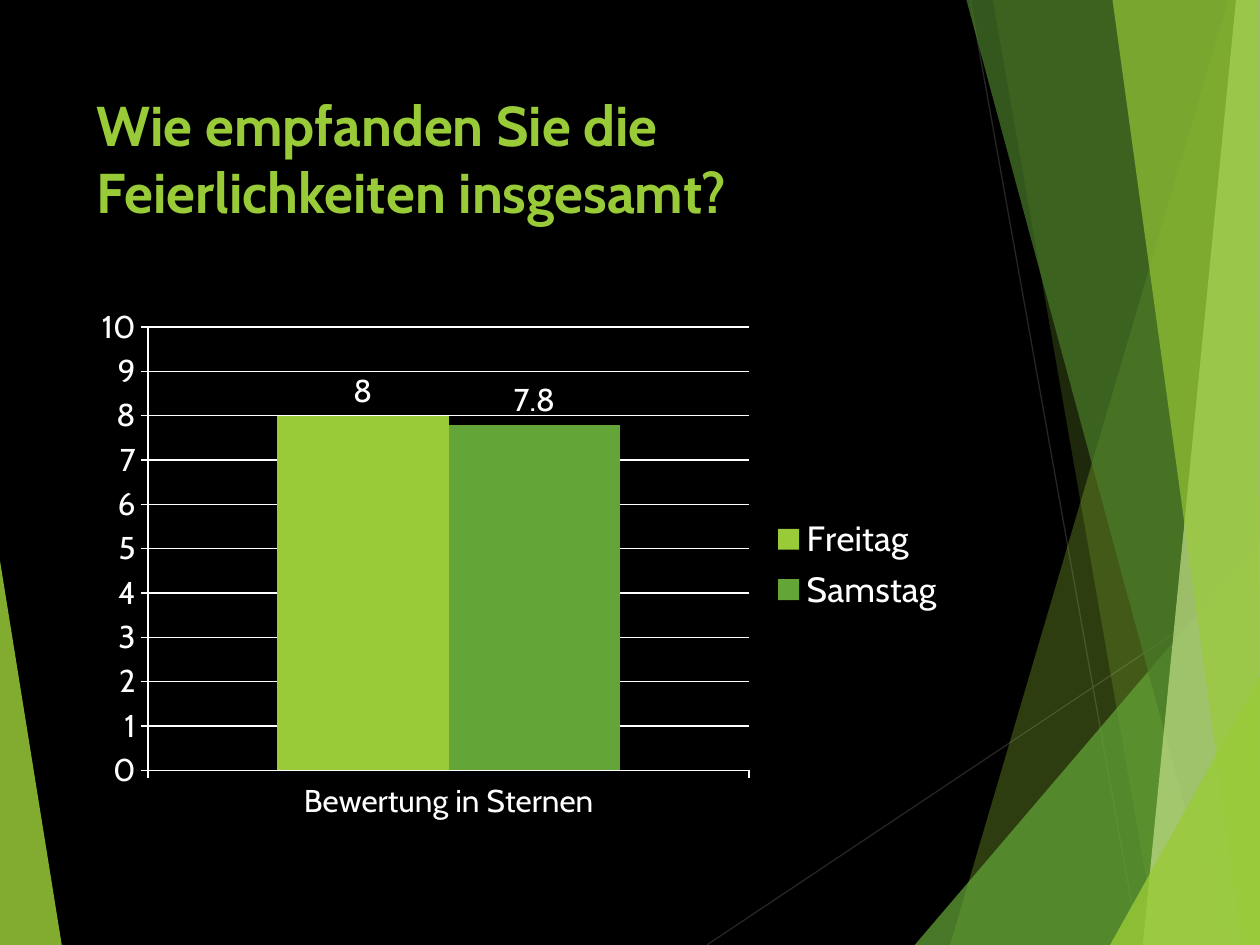
from dataclasses import dataclass

from lxml.etree import SubElement
from pptx import Presentation
from pptx.chart.data import CategoryChartData
from pptx.dml.color import RGBColor
from pptx.enum.chart import XL_CHART_TYPE, XL_LABEL_POSITION, XL_LEGEND_POSITION, XL_TICK_MARK
from pptx.enum.shapes import MSO_CONNECTOR
from pptx.enum.text import MSO_ANCHOR
from pptx.oxml.ns import qn
from pptx.util import Inches, Pt


@dataclass(frozen=True)
class Theme:
    """Colours, font and type sizes of the slide."""
    background: str = "000000"
    text: str = "FFFFFF"
    lime: str = "99CB38"
    green: str = "63A537"
    forest: str = "4A7C29"
    pale: str = "C2E088"
    hairline: str = "262626"
    font: str = "Cabin"
    title_size: int = 32
    legend_size: int = 20
    chart_size: int = 18
    line_width: float = 0.75


THEME = Theme()
WIDTH, HEIGHT = 10, 7.5

RAYS = [((5.61, 7.5), (10, 4.57)), ((7.7, 0), (9.04, 7.5))]

FACETS = [
    ([(0, 4.45), (0.49, 7.5), (0, 7.5)], THEME.lime, 85),
    ([(9.75, 0), (7.54, 7.5), (10, 7.5), (10, 0)], THEME.lime, 30),
    ([(7.88, 0), (9.19, 7.5), (10, 7.5), (10, 0)], THEME.lime, 20),
    ([(7.26, 7.5), (10, 4.29), (10, 7.5)], THEME.green, 72),
    ([(7.67, 0), (9.7, 7.5), (10, 7.5), (10, 0)], THEME.forest, 70),
    ([(9.81, 0), (9.07, 7.5), (10, 7.5), (10, 0)], THEME.pale, 70),
    ([(8.83, 0), (9.86, 7.5), (10, 7.5), (9.98, 0)], THEME.lime, 65),
    ([(8.81, 7.5), (10, 5.37), (10, 7.5)], THEME.lime, 80),
]


def set_attributes(target, values):
    """Set every attribute named in a dict of format values."""
    for name, value in values.items():
        setattr(target, name, value)


def paint(fill, color):
    """Give a fill one solid colour."""
    fill.solid()
    fill.fore_color.rgb = RGBColor.from_string(color)


def format_font(font, size, color, bold=False):
    """Apply the theme font with a size and a colour."""
    set_attributes(font, {"name": THEME.font, "size": Pt(size), "bold": bold})
    font.color.rgb = RGBColor.from_string(color)


def format_line(line, color):
    """Draw a thin line in one colour."""
    paint(line.fill, color)
    line.width = Pt(THEME.line_width)


def add_ray(slide, start, end):
    """Add one hairline between two points."""
    connector = slide.shapes.add_connector(
        MSO_CONNECTOR.STRAIGHT, *(Inches(value) for value in (*start, *end)))
    format_line(connector.line, THEME.hairline)
    SubElement(connector._element.spPr, qn("a:effectLst"))


def add_facet(slide, points, color, opacity):
    """Add one translucent polygon."""
    corners = [(Inches(x), Inches(y)) for x, y in points]
    builder = slide.shapes.build_freeform(*corners[0])
    builder.add_line_segments(corners[1:], close=True)
    shape = builder.convert_to_shape()
    shape.shadow.inherit = False
    shape.line.fill.background()
    paint(shape.fill, color)
    color_element = shape._element.spPr.find(qn("a:solidFill"))[0]
    SubElement(color_element, qn("a:alpha"), val=str(opacity * 1000))


def add_decoration(slide):
    """Place the rays and, over them, the facets."""
    for start, end in RAYS:
        add_ray(slide, start, end)
    for points, color, opacity in FACETS:
        add_facet(slide, points, color, opacity)


def add_title(slide, box, text):
    """Place the slide title in its box."""
    frame = slide.shapes.add_textbox(*map(Inches, box)).text_frame
    set_attributes(frame, {"word_wrap": True, "vertical_anchor": MSO_ANCHOR.TOP})
    run = frame.paragraphs[0].add_run()
    run.text = text
    format_font(run.font, THEME.title_size, THEME.lime, bold=True)


def add_rating_chart(slide, box, category, ratings):
    """Place the column chart with one series per day."""
    data = CategoryChartData()
    data.categories = [category]
    for day, rating, _ in ratings:
        data.add_series(day, [rating])
    chart = slide.shapes.add_chart(
        XL_CHART_TYPE.COLUMN_CLUSTERED, *map(Inches, box), data).chart
    set_attributes(chart, {"has_title": False, "has_legend": True})
    format_font(chart.font, THEME.chart_size, THEME.text)
    set_attributes(chart.legend, {
        "position": XL_LEGEND_POSITION.RIGHT, "include_in_layout": False})
    format_font(chart.legend.font, THEME.legend_size, THEME.text)

    set_attributes(chart.value_axis, {
        "minimum_scale": 0, "maximum_scale": 10, "major_unit": 1,
        "has_major_gridlines": True})
    format_line(chart.value_axis.major_gridlines.format.line, THEME.text)
    for axis in (chart.category_axis, chart.value_axis):
        set_attributes(axis, {
            "major_tick_mark": XL_TICK_MARK.OUTSIDE,
            "minor_tick_mark": XL_TICK_MARK.NONE})
        format_line(axis.format.line, THEME.text)
        format_font(axis.tick_labels.font, THEME.chart_size, THEME.text)

    plot = chart.plots[0]
    set_attributes(plot, {"gap_width": 150, "overlap": 0, "vary_by_categories": False})
    for series, (_, _, color) in zip(plot.series, ratings):
        paint(series.format.fill, color)
        labels = series.data_labels
        set_attributes(labels, {
            "show_value": True, "position": XL_LABEL_POSITION.OUTSIDE_END})
        format_font(labels.font, THEME.chart_size, THEME.text)


def main():
    """Build and save the slide."""
    presentation = Presentation()
    set_attributes(presentation, {
        "slide_width": Inches(WIDTH), "slide_height": Inches(HEIGHT)})
    slide = presentation.slides.add_slide(presentation.slide_layouts[6])
    paint(slide.background.fill, THEME.background)
    add_decoration(slide)
    add_title(slide, (0.67, 0.67, 6.94, 1.44),
              "Wie empfanden Sie die Feierlichkeiten insgesamt?")
    add_rating_chart(slide, (0.67, 2.36, 6.94, 4.24), "Bewertung in Sternen", [
        ("Freitag", 8, THEME.lime), ("Samstag", 7.8, THEME.green)])
    presentation.save("out.pptx")


if __name__ == "__main__":
    main()
